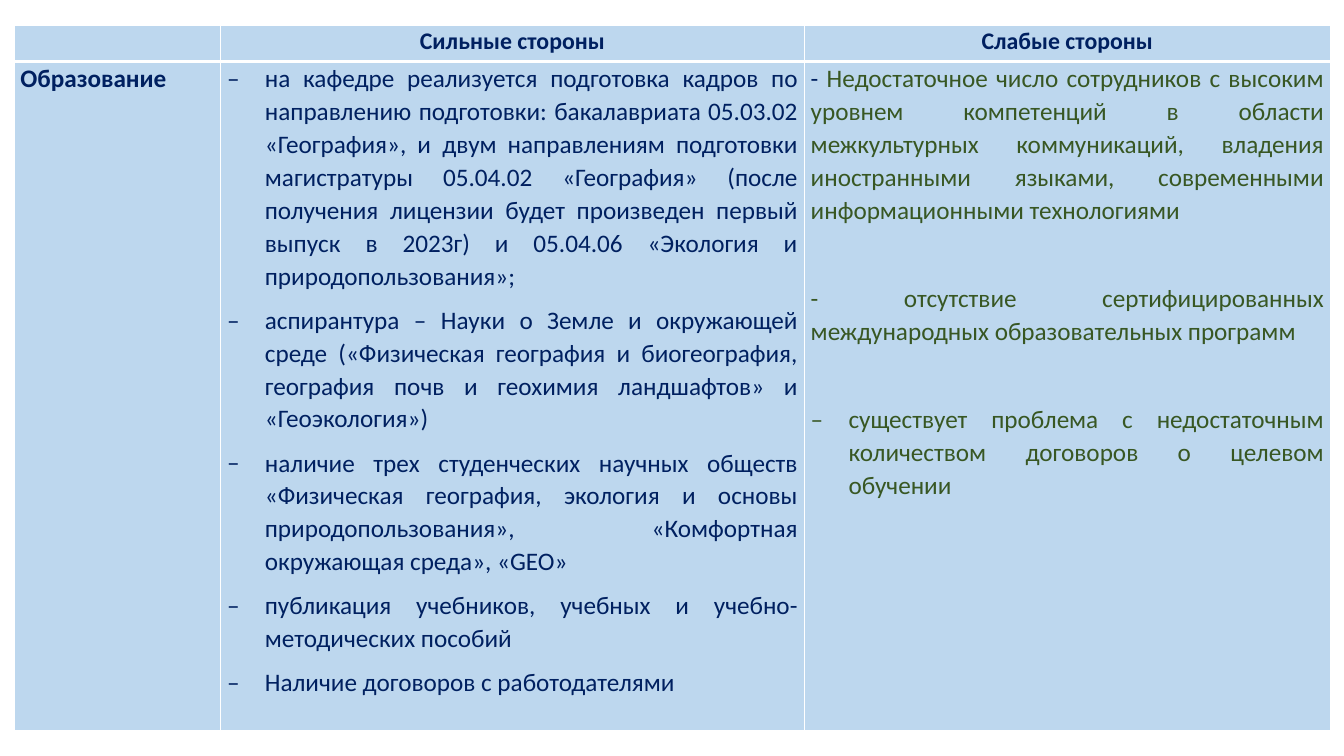
import pptx
import pptx.util
import pptx.dml.color
import pptx.enum.text
import pptx.oxml
import pptx.oxml.ns

Pt = pptx.util.Pt
ALIGN = pptx.enum.text.PP_ALIGN

COLOURS = {"cell": "BDD7EE", "border": "FFFFFF", "navy": "002060", "green": "385723"}
FONT = "Calibri"

# Content: a paragraph is (runs, dash bullet, space before); a run is (text, colour)
headings = ["", "Сильные стороны", "Слабые стороны"]
topic = "Образование"
strengths = [
    "на кафедре реализуется подготовка кадров по направлению подготовки: бакалавриата 05.03.02 "
    "«География», и двум направлениям подготовки магистратуры 05.04.02 «География» (после получения "
    "лицензии будет произведен первый выпуск в 2023г) и 05.04.06 «Экология и природопользования»;",
    "аспирантура – Науки о Земле и окружающей среде («Физическая география и биогеография, "
    "география почв и геохимия ландшафтов» и «Геоэкология»)",
    "наличие трех студенческих научных обществ «Физическая география, экология и основы "
    "природопользования», «Комфортная окружающая среда», «GEO»",
    "публикация учебников, учебных и учебно-методических пособий",
    "Наличие договоров с работодателями",
]
GAP = 31.5
weaknesses = [
    ([("- ", "navy"),
      ("Недостаточное число сотрудников с высоким уровнем компетенций в области межкультурных "
       "коммуникаций, владения иностранными языками, современными информационными технологиями",
       "green")], False, 0),
    ([("- отсутствие сертифицированных международных образовательных программ", "green")], False, GAP),
    ([("существует проблема с недостаточным количеством договоров о целевом обучении", "green")],
     True, GAP),
]
body = [
    [([(topic, "navy")], False, 0)],
    [([(text, "navy")], True, 0) for text in strengths],
    weaknesses,
]

# Layout
LEFT, TOP = 10, 18
COLUMN_WIDTHS = [147.6, 416.9, 375.8]
ROW_HEIGHTS = [26, 478]
SIDE_MARGIN = 4.6
BULLET_INDENT = 27


def colour(name):
    return pptx.dml.color.RGBColor.from_string(COLOURS[name])


def add_child(parent, xml):
    parent.append(pptx.oxml.parse_xml(xml.replace(">", f" {pptx.oxml.ns.nsdecls('a')}>", 1)))


def style_cell(cell, top_width, bottom_width):
    cell.margin_left = cell.margin_right = Pt(SIDE_MARGIN)
    cell.margin_top = cell.margin_bottom = 0
    properties = cell._tc.get_or_add_tcPr()
    for side, width in (("L", 1), ("R", 1), ("T", top_width), ("B", bottom_width)):
        add_child(properties, f'<a:ln{side} w="{Pt(width)}"><a:solidFill>'
                  f'<a:srgbClr val="{COLOURS["border"]}"/></a:solidFill></a:ln{side}>')
    cell.fill.solid()
    cell.fill.fore_color.rgb = colour("cell")


def write_paragraph(paragraph, runs, align, size, bold, bulleted=False, before=0):
    if bulleted:
        properties = paragraph._p.get_or_add_pPr()
        properties.set("marL", str(Pt(BULLET_INDENT)))
        properties.set("indent", str(-Pt(BULLET_INDENT)))
        add_child(properties, f'<a:buFont typeface="{FONT}"></a:buFont>')
        add_child(properties, '<a:buChar char="–"></a:buChar>')
    paragraph.alignment = align
    paragraph.line_spacing = 1.07
    paragraph.space_after = Pt(8)
    if before:
        paragraph.space_before = Pt(before)
    for text, tint in runs:
        run = paragraph.add_run()
        run.text = text
        run.font.name = FONT
        run.font.size = Pt(size)
        run.font.bold = bold
        run.font.color.rgb = colour(tint)


def main():
    deck = pptx.Presentation()
    deck.slide_width, deck.slide_height = Pt(960), Pt(540)
    slide = deck.slides.add_slide(deck.slide_layouts[6])
    swot = slide.shapes.add_table(2, 3, Pt(LEFT), Pt(TOP),
                                  Pt(sum(COLUMN_WIDTHS)), Pt(sum(ROW_HEIGHTS))).table
    for column, width in zip(swot.columns, COLUMN_WIDTHS):
        column.width = Pt(width)
    for row, height in zip(swot.rows, ROW_HEIGHTS):
        row.height = Pt(height)

    for index, (heading, paragraphs) in enumerate(zip(headings, body)):
        # Heading row
        heading_cell = swot.cell(0, index)
        style_cell(heading_cell, 1, 3)
        if heading:
            write_paragraph(heading_cell.text_frame.paragraphs[0], [(heading, "navy")],
                            ALIGN.CENTER, 17, True)
        # Body row
        body_cell = swot.cell(1, index)
        style_cell(body_cell, 3, 1)
        frame = body_cell.text_frame
        for number, (runs, bulleted, before) in enumerate(paragraphs):
            paragraph = frame.add_paragraph() if number else frame.paragraphs[0]
            write_paragraph(paragraph, runs, ALIGN.JUSTIFY, 18, index == 0, bulleted, before)

    deck.save("out.pptx")


if __name__ == "__main__":
    main()
